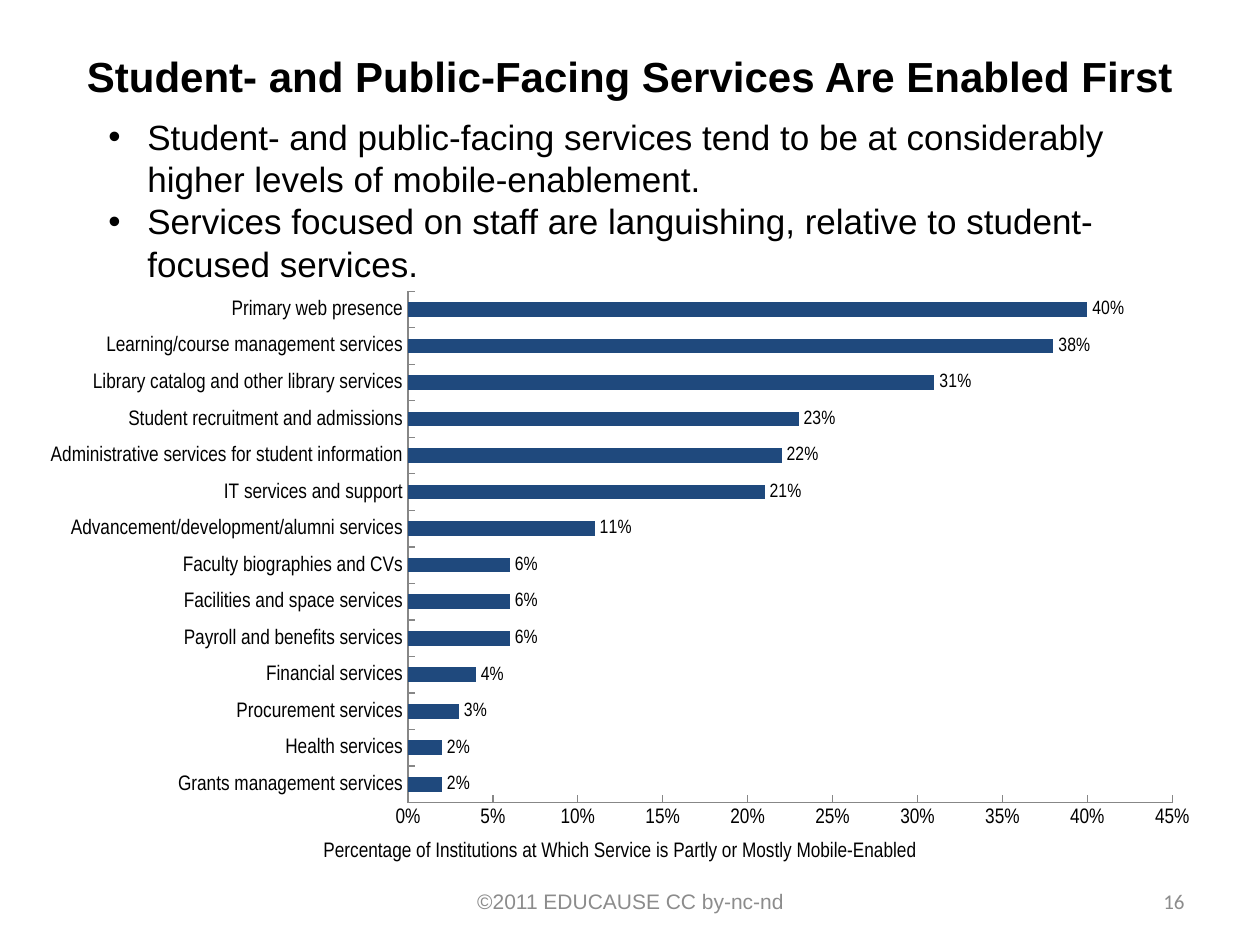
from lxml import etree
from pptx import Presentation
from pptx import util as u
from pptx.chart.data import CategoryChartData
from pptx.dml.color import RGBColor
from pptx.enum import chart as charts, text
from pptx.oxml import parse_xml
from pptx.oxml.ns import nsdecls, qn

COLORS = {"ink": "000000", "muted": "8C8C8C", "axis": "878787", "bar": "1F497D"}

deck = Presentation()
deck.slide_width, deck.slide_height = u.Inches(10), u.Inches(7.5)
page = deck.slides.add_slide(deck.slide_layouts[1])


def style(font, size, name="Arial", color="ink", bold=False):
    font.size, font.name, font.bold = u.Pt(size), name, bold
    font.color.rgb = RGBColor.from_string(COLORS[color])


def write(box, place, lines, align, anchor, bullet=False, **look):
    box.left, box.top, box.width, box.height = map(u.Inches, place)
    frame = box.text_frame
    frame.word_wrap, frame.vertical_anchor = True, anchor
    frame.auto_size = text.MSO_AUTO_SIZE.NONE
    frame.text = "\n".join(lines)
    for para in frame.paragraphs:
        para.alignment = align
        para.space_before = u.Pt(0)
        if bullet:
            props = para._p.get_or_add_pPr()
            props.set("marL", str(u.Inches(0.31)))
            props.set("indent", str(-u.Inches(0.31)))
            etree.SubElement(props, qn("a:buFont")).set("typeface", "Arial")
            etree.SubElement(props, qn("a:buChar")).set("char", "•")
        for span in para.runs:
            style(span.font, **look)


# Title and bullets
LEFT, CENTER, RIGHT = text.PP_ALIGN.LEFT, text.PP_ALIGN.CENTER, text.PP_ALIGN.RIGHT
TOP, MIDDLE = text.MSO_ANCHOR.TOP, text.MSO_ANCHOR.MIDDLE
write(page.shapes.title, (0.5, 0.13, 9, 0.94),
      ["Student- and Public-Facing Services Are Enabled First"],
      CENTER, MIDDLE, size=24, bold=True)
write(page.placeholders[1], (0.76, 0.87, 8.17, 1.45),
      ["Student- and public-facing services tend to be at considerably "
       "higher levels of mobile-enablement.",
       "Services focused on staff are languishing, relative to student-focused services."],
      LEFT, TOP, bullet=True, size=20)

# Footer and page number
write(page.shapes.add_textbox(0, 0, 0, 0), (3.42, 6.95, 3.17, 0.4),
      ["©2011 EDUCAUSE CC by-nc-nd"], CENTER, MIDDLE, size=12, color="muted")
write(page.shapes.add_textbox(0, 0, 0, 0), (7.17, 6.95, 2.33, 0.4),
      ["16"], RIGHT, MIDDLE, size=12, name="Calibri", color="muted")

# Bar chart, listed from the bottom bar up
services = {
    "Grants management services": 0.02,
    "Health services": 0.02,
    "Procurement services": 0.03,
    "Financial services": 0.04,
    "Payroll and benefits services": 0.06,
    "Facilities and space services": 0.06,
    "Faculty biographies and CVs": 0.06,
    "Advancement/development/alumni services": 0.11,
    "IT services and support": 0.21,
    "Administrative services for student information": 0.22,
    "Student recruitment and admissions": 0.23,
    "Library catalog and other library services": 0.31,
    "Learning/course management services": 0.38,
    "Primary web presence": 0.4,
}
data = CategoryChartData(number_format="0%")
data.categories = list(services)
data.add_series("Series 1", list(services.values()))
chart = page.shapes.add_chart(charts.XL_CHART_TYPE.BAR_CLUSTERED,
                              *map(u.Inches, (0.11, 2.17, 9.48, 4.72)), data).chart
style(chart.font, 18, "Calibri")
chart.has_legend = chart.has_title = False

# Bars and their labels
plot = chart.plots[0]
plot.gap_width, plot.vary_by_categories = 150, False
fill = plot.series[0].format.fill
fill.solid()
fill.fore_color.rgb = RGBColor.from_string(COLORS["bar"])
plot.has_data_labels = True
labels = plot.data_labels
labels.show_value = True
labels.number_format, labels.number_format_is_linked = "0%", False
labels.position = charts.XL_LABEL_POSITION.OUTSIDE_END
style(labels.font, 11, "Arial Narrow")

# Axes
for axis in (chart.category_axis, chart.value_axis):
    axis.has_major_gridlines = False
    axis.major_tick_mark = charts.XL_TICK_MARK.INSIDE
    axis.minor_tick_mark = charts.XL_TICK_MARK.NONE
    axis.format.line.color.rgb = RGBColor.from_string(COLORS["axis"])
    axis.format.line.width = u.Pt(0.75)
    style(axis.tick_labels.font, 12, "Arial Narrow")
scale = chart.value_axis
scale.minimum_scale, scale.maximum_scale, scale.major_unit = 0, 0.45, 0.05
scale.tick_labels.number_format = "0%"
scale.tick_labels.number_format_is_linked = False
caption = scale.axis_title.text_frame
caption.text = "Percentage of Institutions at Which Service is Partly or Mostly Mobile-Enabled"
style(caption.paragraphs[0].runs[0].font, 12, "Arial Narrow")

# Fixed plot area, as shares of the chart
area = chart._chartSpace.chart.plotArea
for old in area.findall(qn("c:layout")):
    area.remove(old)
shares = "".join(f'<c:{key} val="{share}"/>' for key, share in
                 zip("xywh", (0.33, 0.03, 0.64, 0.86)))
area.insert(0, parse_xml(
    f'<c:layout {nsdecls("c")}><c:manualLayout><c:layoutTarget val="inner"/>'
    f'<c:xMode val="edge"/><c:yMode val="edge"/>{shares}</c:manualLayout></c:layout>'))

deck.save("out.pptx")
